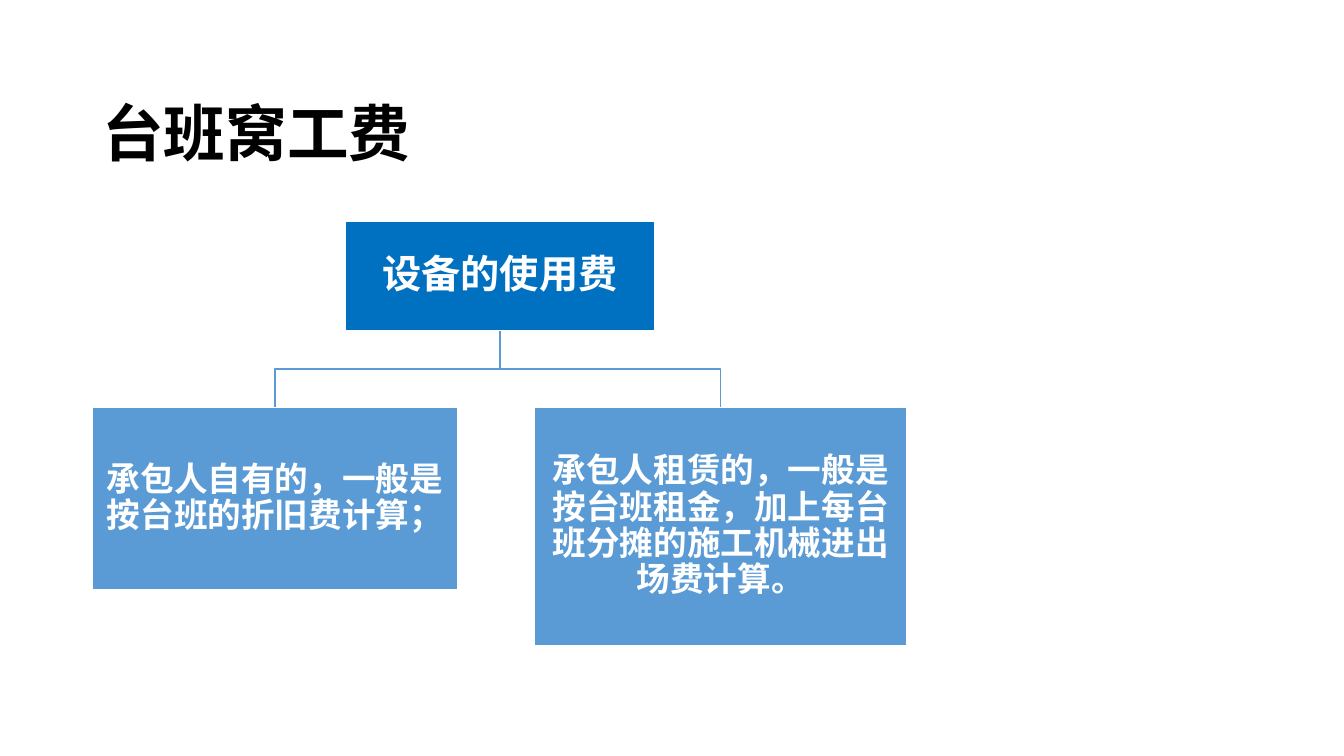
"""Build the slide on idle-machine costs."""
import dataclasses

import pptx
import pptx.dml.color
import pptx.enum.lang
import pptx.enum.shapes
import pptx.enum.text
import pptx.util

Pt = pptx.util.Pt
Align = pptx.enum.text.PP_ALIGN


@dataclasses.dataclass(frozen=True)
class Theme:
    font: str = "Times New Roman"
    ink: str = "000000"
    paper: str = "FFFFFF"
    root: str = "0070C0"
    branch: str = "5B9BD5"
    title_size: int = 44
    root_size: int = 28
    branch_size: int = 24
    line_width: int = 1


def color(value):
    return pptx.dml.color.RGBColor.from_string(value)


def write_text(frame, text, *, font, size, ink, align, spacing, inset):
    frame.word_wrap = True
    frame.vertical_anchor = pptx.enum.text.MSO_ANCHOR.MIDDLE
    frame.margin_left = frame.margin_right = Pt(inset[0])
    frame.margin_top = frame.margin_bottom = Pt(inset[1])
    paragraph = frame.paragraphs[0]
    paragraph.alignment = align
    paragraph.line_spacing = spacing
    run = paragraph.add_run()
    run.text = text
    run.font.name = font
    run.font.size = Pt(size)
    run.font.bold = True
    run.font.color.rgb = color(ink)
    run.font.language_id = pptx.enum.lang.MSO_LANGUAGE_ID.SIMPLIFIED_CHINESE


class SlideBuilder:
    def __init__(self, slide, theme):
        self.slide = slide
        self.theme = theme

    def title(self, text, bounds):
        shape = self.slide.shapes.add_textbox(*map(Pt, bounds))
        write_text(shape.text_frame, text, font=self.theme.font,
                   size=self.theme.title_size, ink=self.theme.ink,
                   align=Align.LEFT, spacing=1.5, inset=(7.2, 3.6))

    def box(self, text, bounds, fill, size):
        shape = self.slide.shapes.add_shape(
            pptx.enum.shapes.MSO_SHAPE.RECTANGLE, *map(Pt, bounds))
        shape.shadow.inherit = False
        shape.fill.solid()
        shape.fill.fore_color.rgb = color(fill)
        self.outline(shape, self.theme.paper)
        write_text(shape.text_frame, text, font=self.theme.font, size=size,
                   ink=self.theme.paper, align=Align.CENTER, spacing=0.9,
                   inset=(1.4, 1.4))

    def elbow(self, parent, child):
        start_x, start_y = parent[0] + parent[2] / 2, parent[1] + parent[3]
        end_x, end_y = child[0] + child[2] / 2, child[1]
        middle_y = (start_y + end_y) / 2
        builder = self.slide.shapes.build_freeform(Pt(start_x), Pt(start_y))
        corners = [(start_x, middle_y), (end_x, middle_y), (end_x, end_y)]
        builder.add_line_segments([(Pt(x), Pt(y)) for x, y in corners], close=False)
        shape = builder.convert_to_shape()
        shape.shadow.inherit = False
        shape.fill.background()
        self.outline(shape, self.theme.branch)

    def outline(self, shape, ink):
        shape.line.color.rgb = color(ink)
        shape.line.width = Pt(self.theme.line_width)


def main():
    presentation = pptx.Presentation()
    presentation.slide_width, presentation.slide_height = Pt(960), Pt(540)
    theme = Theme()
    slide = presentation.slides.add_slide(presentation.slide_layouts[6])
    builder = SlideBuilder(slide, theme)

    builder.title("台班窝工费", (66, 28.75, 828, 104.4))
    root = (246.6, 158.4, 221, 77.8)
    branches = [
        ("承包人自有的，一般是按台班的折旧费计算；", (66, 291, 260.8, 130)),
        ("承包人租赁的，一般是按台班租金，加上每台班分摊的施工机械进出场费计算。",
         (381.8, 291, 266, 170)),
    ]
    for text, bounds in reversed(branches):
        builder.elbow(root, bounds)
    builder.box("设备的使用费", root, theme.root, theme.root_size)
    for text, bounds in branches:
        builder.box(text, bounds, theme.branch, theme.branch_size)
    presentation.save("out.pptx")


if __name__ == "__main__":
    main()
